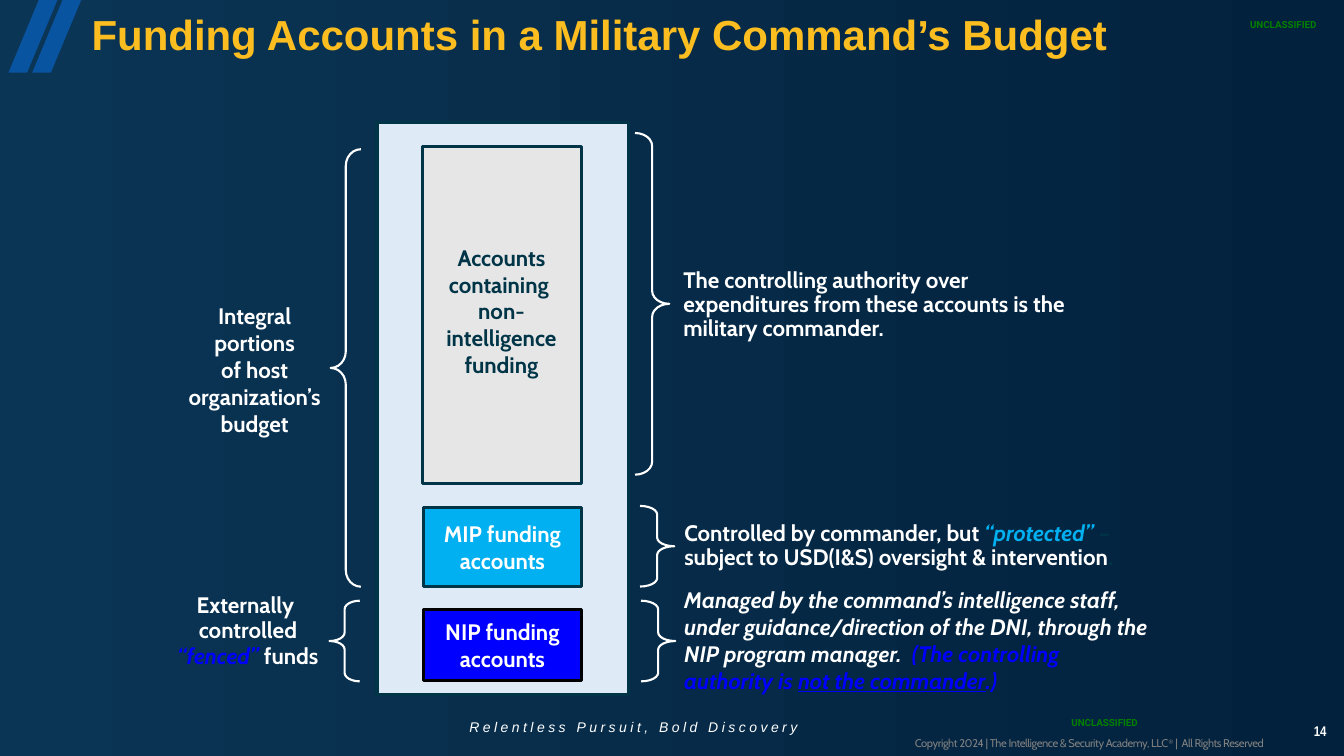
from lxml import etree
from pptx import Presentation
from pptx.dml.color import RGBColor
from pptx.enum.shapes import MSO_SHAPE
from pptx.enum.text import MSO_ANCHOR, PP_ALIGN
from pptx.oxml.ns import qn
from pptx.util import Pt

RECT, SLASH = MSO_SHAPE.RECTANGLE, MSO_SHAPE.PARALLELOGRAM
LEFT_BRACE, RIGHT_BRACE = MSO_SHAPE.LEFT_BRACE, MSO_SHAPE.RIGHT_BRACE
LEFT, CENTER, RIGHT = PP_ALIGN.LEFT, PP_ALIGN.CENTER, PP_ALIGN.RIGHT
TOP, MIDDLE = MSO_ANCHOR.TOP, MSO_ANCHOR.MIDDLE
WHITE, TEAL, BLUE, SKY = "FFFFFF", "003548", "0000FF", "00B0F0"
GREEN, GOLD, GREY = "008000", "FBBD1F", "808080"


def rgb(value):
    """Turn a hex string into a colour."""
    return RGBColor.from_string(value)


def within(box, dx, dy, w, h):
    """Return a box offset from the corner of another, in points."""
    return box[0] + dx, box[1] + dy, w, h


def write(tf, paras, size=16, color=WHITE, font="Cabin", bold=True, italic=False,
          align=LEFT, anchor=TOP, spacing=1.0, tracking=0, wrap=True):
    """Fill a text frame; a run is a string or a (text, font overrides) pair."""
    tf.word_wrap, tf.vertical_anchor = wrap, anchor
    for i, runs in enumerate(paras):
        p = tf.paragraphs[0] if i == 0 else tf.add_paragraph()
        p.alignment, p.line_spacing = align, spacing
        f = p.font
        f.name, f.size, f.bold, f.italic = font, Pt(size), bold, italic
        f.color.rgb = rgb(color)
        for run in [runs] if isinstance(runs, str) else runs:
            if run == "\n":
                p.add_line_break()
                continue
            text, style = (run, {}) if isinstance(run, str) else run
            r = p.add_run()
            r.text = text
            if "color" in style:
                r.font.color.rgb = rgb(style["color"])
            if "italic" in style:
                r.font.italic = style["italic"]
            if "underline" in style:
                r.font.underline = style["underline"]
            rPr = r._r.get_or_add_rPr()
            if tracking:
                rPr.set("spc", str(round(tracking * 100)))
            if "raised" in style:
                rPr.set("baseline", str(style["raised"] * 1000))


def label(s, box, paras, **style):
    """Add a text box."""
    tf = s.shapes.add_textbox(*map(Pt, box)).text_frame
    write(tf, paras, **style)
    return tf


def block(s, kind, box, fill=None, line=None, width=2.25, adj=()):
    """Add a preset shape with the given fill, outline and adjustments."""
    sp = s.shapes.add_shape(kind, *map(Pt, box))
    sp.shadow.inherit = False
    for i, value in enumerate(adj):
        sp.adjustments[i] = value
    if fill:
        sp.fill.solid()
        sp.fill.fore_color.rgb = rgb(fill)
    else:
        sp.fill.background()
    if line:
        sp.line.color.rgb = rgb(line)
        sp.line.width = Pt(width)
    else:
        sp.line.fill.background()
    return sp


def brace(s, kind, box, curve):
    """Add a white brace."""
    block(s, kind, box, line=WHITE, width=1.5, adj=(curve, 0.5))


def backdrop(s):
    """Set the navy gradient background."""
    fill = s.background.fill
    fill.gradient()
    fill.gradient_angle = 180
    for stop, color, pos in zip(fill.gradient_stops, ("02213C", "0B3555"), (0, 1)):
        stop.color.rgb, stop.position = rgb(color), pos


def header(s, box):
    """Place the slashes, title and upper marking."""
    for dx in (23, 6):
        block(s, SLASH, within(box, dx, 0, 35, 52), fill="0954A0", adj=(0.62,))
    label(s, within(box, 58.3, 5.8, 877, 41.8),
          ["Funding Accounts in a Military Command’s Budget"],
          size=30, color=GOLD, font="Arial", anchor=MIDDLE, spacing=0.9)
    label(s, within(box, 747.4, 5, 200, 26), ["UNCLASSIFIED"], size=7,
          color=GREEN, font="Roboto", align=RIGHT, anchor=MIDDLE, spacing=0.9)


def accounts(s, box):
    """Place the budget column with its three account blocks."""
    block(s, RECT, box, fill="DEEBF7", line=TEAL)
    block(s, RECT, within(box, 32.4, 16.6, 113.8, 241.2), fill="E7E6E6", line=TEAL)
    label(s, within(box, 37.4, 82.8, 103, 104.4),
          ["Accounts containing ", "non-", "intelligence", "funding"],
          color=TEAL, align=CENTER)
    for name, dy, h, fill, line in (("MIP", 274.4, 56.9, SKY, TEAL),
                                    ("NIP", 347.8, 50.4, BLUE, "000000")):
        sp = block(s, RECT, within(box, 33.1, dy, 113, h), fill=fill, line=line)
        write(sp.text_frame, [f"{name} funding", "accounts"],
              align=CENTER, anchor=MIDDLE, wrap=False)


def sources(s, box):
    """Place the left braces and what they group."""
    brace(s, LEFT_BRACE, within(box, 128.2, 0, 21.6, 312.5), 0.55)
    brace(s, LEFT_BRACE, within(box, 127.4, 322.5, 21.6, 57.6), 0.28)
    label(s, within(box, 16.6, 105.8, 114.5, 104.4),
          ["Integral portions", "of host organization’s budget"], align=CENTER)
    label(s, within(box, 0, 313.2, 138.2, 62.6),
          ["Externally ",
           ["controlled ", ("“fenced” ", {"color": BLUE, "italic": True}), "funds"]],
          align=CENTER, spacing=0.95)


def authorities(s, box):
    """Place the right braces and who controls each account."""
    for dx, dy, h, curve in ((0, 0, 244.1, 0.38), (3.6, 266.4, 57.6, 0.25),
                             (4.3, 334.1, 57.6, 0.25)):
        brace(s, RIGHT_BRACE, within(box, dx, dy, 24.5, h), curve)
    label(s, within(box, 27.4, 93.6, 287.3, 59.8),
          ["The controlling authority over expenditures from these accounts "
           "is the military commander."], spacing=0.9)
    label(s, within(box, 28.1, 274.4, 323.3, 42.5),
          [["Controlled by commander, but ",
            ("“protected” ", {"color": SKY, "italic": True}), ("–", {"color": TEAL}),
            "\n", "subject to USD(I&S) oversight & intervention",
            (".", {"color": TEAL})]], spacing=0.9)
    label(s, within(box, 28.1, 320.4, 347.8, 85),
          [["Managed by the command’s intelligence staff, under guidance/direction "
            "of the DNI, through the NIP program manager.  ",
            ("(The controlling authority is ", {"color": BLUE}),
            ("not the commander", {"color": BLUE, "underline": True}),
            (".)", {"color": BLUE})]], italic=True)


def footer(s, box):
    """Place the motto, lower marking, copyright and slide number."""
    label(s, within(box, 280.8, 5.8, 343.4, 19.4),
          ["Relentless Pursuit, Bold Discovery"], size=10, font="Arial",
          bold=False, italic=True, align=CENTER, tracking=2.5)
    label(s, within(box, 758.2, 0, 200, 26), ["UNCLASSIFIED"], size=7,
          color=GREEN, font="Roboto", anchor=MIDDLE, spacing=0.9)
    label(s, within(box, 622, 18.7, 288, 17.3),
          [["Copyright 2024 | The Intelligence & Security Academy, LLC",
            ("®", {"raised": 30}), " |  All Rights Reserved"]],
          size=8, color=GREY, bold=False, align=RIGHT, tracking=-0.3)
    tf = label(s, within(box, 921.6, 5.8, 29.5, 26), ["14"], size=10,
               font="Arial Narrow", align=RIGHT, anchor=MIDDLE, spacing=0.9)
    tf.margin_left = tf.margin_right = Pt(3.6)
    p = tf.paragraphs[0]._p
    r = p.find(qn("a:r"))
    field = etree.Element(qn("a:fld"), type="slidenum",
                          id="{B6F15528-21DE-4FAA-801E-634DDDAF4B2B}")
    p.replace(r, field)
    field.extend(list(r))


def main():
    """Build and save the slide."""
    prs = Presentation()
    prs.slide_width, prs.slide_height = Pt(960), Pt(540)
    prs.element.set("firstSlideNum", "14")
    s = prs.slides.add_slide(prs.slide_layouts[6])
    backdrop(s)
    header(s, (0, 0, 960, 52))
    accounts(s, (269.3, 87.8, 180, 408.2))
    sources(s, (108, 106.6, 149.8, 380.1))
    authorities(s, (453.6, 95, 375.9, 405.4))
    footer(s, (0, 504, 960, 36))
    prs.save("out.pptx")


if __name__ == "__main__":
    main()
